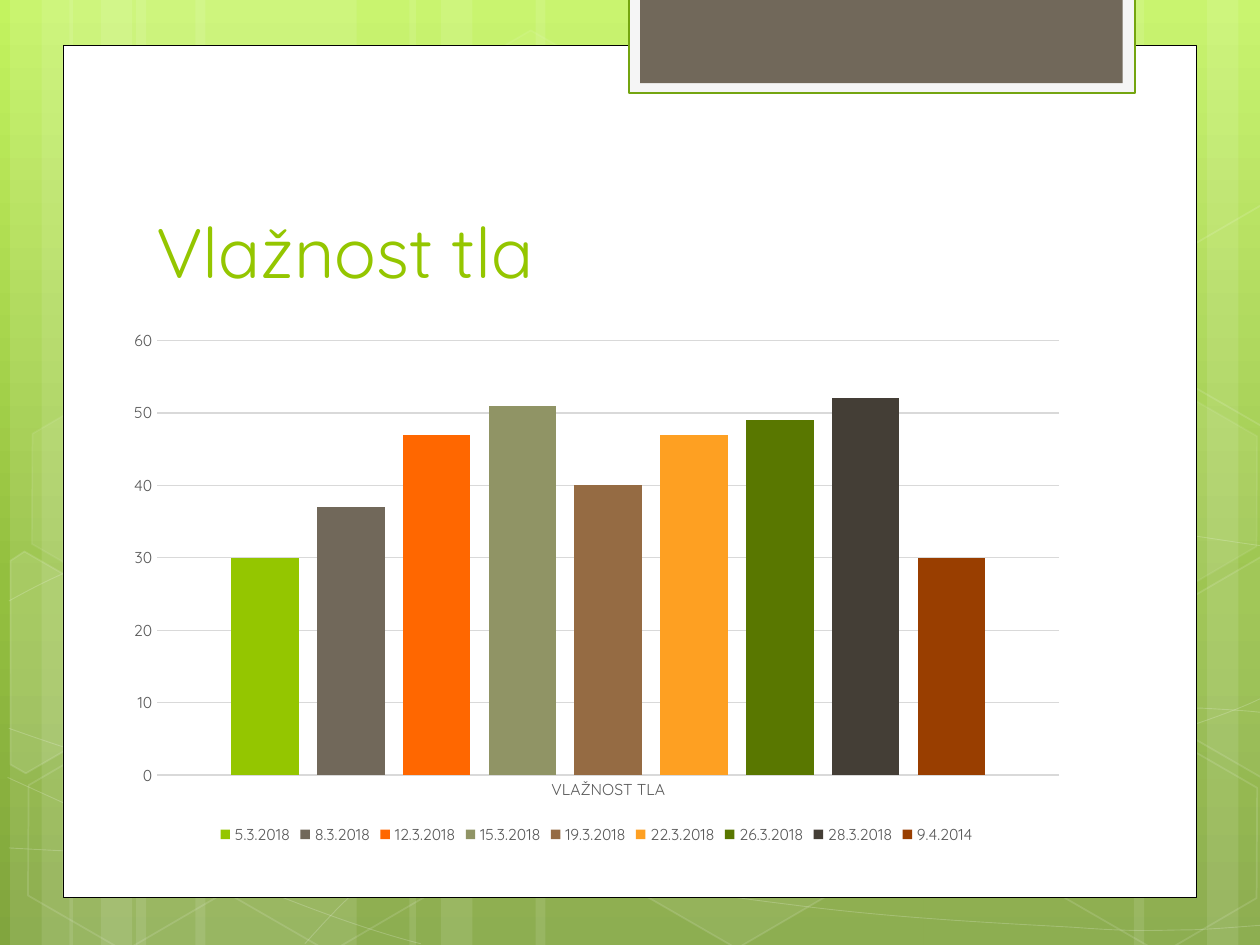
from copy import deepcopy
from dataclasses import dataclass

from lxml.etree import SubElement
from pptx import Presentation
from pptx.chart.data import CategoryChartData
from pptx.dml.color import RGBColor
from pptx.enum.chart import XL_CHART_TYPE, XL_LEGEND_POSITION, XL_TICK_MARK
from pptx.enum.shapes import MSO_SHAPE
from pptx.enum.text import MSO_ANCHOR
from pptx.oxml.ns import qn
from pptx.util import Emu, Pt

PX = 9144  # 100 px to the inch
FONT = "Quicksand"
WHITE = "FFFFFF"
TILT = 30
Point = tuple[int, int]


@dataclass
class Paint:
    """Fill and line; an empty colour means none, opacity is in percent."""
    fill: str = ""
    fill_opacity: int = 100
    line: str = ""
    line_opacity: int = 100
    width: float = 1


@dataclass
class Box:
    left: int
    top: int
    width: int
    height: int

    def emu(self) -> list[Emu]:
        return [px(n) for n in (self.left, self.top, self.width, self.height)]


@dataclass
class Hexagon:
    left: int
    top: int
    fill_opacity: int
    line_opacity: int


@dataclass
class Shard:
    """A hexagon cut off by the slide's edge, its points counted from left and top."""
    left: int
    top: int
    points: list[Point]
    fill_opacity: int


@dataclass
class Series:
    name: str
    value: int
    color: str


BAND = Paint(WHITE, 10)
BANDS = [(108, 175), (8, 50), (33, 83), (155, 175), (55, 50), (80, 83),
         (733, 175), (958, 50), (900, 83), (425, 308), (325, 50), (350, 83)]

# A start point, then two control points and an end point for each piece.
CURVE = Paint(line=WHITE, line_opacity=20, width=0.5)
CURVES = [
    [(7, 673), (61, 676), (115, 679), (190, 678), (265, 677), (358, 675), (458, 665),
     (558, 655), (700, 636), (792, 617), (883, 598), (977, 568), (1007, 551)],
    [(7, 477), (36, 461), (65, 446), (121, 431), (178, 416), (259, 394), (347, 387),
     (436, 380), (544, 379), (654, 387), (764, 395), (947, 426), (1007, 434)],
    [(6, 617), (127, 672), (247, 727), (334, 749)],
    [(7, 578), (38, 589), (70, 600), (128, 616), (186, 631), (273, 656), (357, 673),
     (440, 690), (545, 708), (628, 718), (711, 729), (800, 733), (853, 736),
     (905, 740), (919, 738), (945, 738), (971, 737), (989, 735), (1007, 734)],
    [(242, 749), (260, 729), (278, 709), (302, 691), (326, 673), (360, 653), (388, 639),
     (416, 625), (433, 619), (470, 609), (506, 599), (573, 585), (608, 578),
     (644, 571), (649, 571), (680, 569), (711, 566), (760, 563), (794, 562),
     (829, 561), (886, 562), (886, 562), (908, 562), (931, 562), (953, 562),
     (971, 563), (988, 564), (997, 565), (1006, 566), (1003, 565), (1006, 566)],
]

HEXAGONS = [
    Hexagon(334, 36, 4, 8), Hexagon(497, 589, 6, 12), Hexagon(11, 591, 0, 12),
    Hexagon(14, 312, 7, 8), Hexagon(174, 592, 0, 12), Hexagon(753, 453, 10, 12),
    Hexagon(834, 593, 0, 12), Hexagon(834, 314, 7, 8),
]

LEFT_SHARD = [(0, 12), (6, 0), (95, 0), (138, 77), (95, 152), (81, 152)]
RIGHT_SHARD = [(0, 75), (43, 0), (52, 0), (136, 145), (132, 152), (44, 152)]
SHARDS = [Shard(-33, 459, LEFT_SHARD, 10), Shard(917, 444, RIGHT_SHARD, 4),
          Shard(917, 165, RIGHT_SHARD, 0)]

MOISTURE = [
    Series("5.3.2018", 30, "94C600"), Series("8.3.2018", 37, "71685A"),
    Series("12.3.2018", 47, "FF6700"), Series("15.3.2018", 51, "909465"),
    Series("19.3.2018", 40, "956B43"), Series("22.3.2018", 47, "FEA022"),
    Series("26.3.2018", 49, "597700"), Series("28.3.2018", 52, "443E36"),
    Series("9.4.2014", 30, "993E00"),
]


def px(length: int) -> Emu:
    return Emu(length * PX)


def rgb(color: str) -> RGBColor:
    return RGBColor.from_string(color)


def set_solid(fill, color: str, opacity: int, owner) -> None:
    if not color or not opacity:
        fill.background()
        return
    fill.solid()
    fill.fore_color.rgb = rgb(color)
    if opacity < 100:
        solid = owner.find(qn("a:solidFill"))
        SubElement(solid[0], qn("a:alpha"), val=str(opacity * 1000))


def apply_paint(shape, paint: Paint) -> None:
    shape.shadow.inherit = False
    properties = shape.element.spPr
    set_solid(shape.fill, paint.fill, paint.fill_opacity, properties)
    shape.line.width = Pt(paint.width)
    set_solid(shape.line.fill, paint.line, paint.line_opacity, properties.find(qn("a:ln")))


def add_box(slide, box: Box, paint: Paint, kind=MSO_SHAPE.RECTANGLE):
    shape = slide.shapes.add_shape(kind, *box.emu())
    apply_paint(shape, paint)
    return shape


def add_outline(slide, points: list[Point], paint: Paint, close: bool):
    builder = slide.shapes.build_freeform(*points[0], scale=PX)
    builder.add_line_segments(points[1:], close=close)
    shape = builder.convert_to_shape()
    apply_paint(shape, paint)
    return shape


def add_curve(slide, points: list[Point]) -> None:
    """Draw the points as straight lines, then join each three lines into one Bézier piece."""
    shape = add_outline(slide, points, CURVE, close=False)
    outline = shape.element.find(".//" + qn("a:path"))
    lines = outline.findall(qn("a:lnTo"))
    for i in range(0, len(lines), 3):
        piece = SubElement(outline, qn("a:cubicBezTo"))
        for line in lines[i:i + 3]:
            piece.append(line[0])
            outline.remove(line)


def add_background(slide) -> None:
    fill = slide.background.fill
    fill.gradient()
    fill.gradient_angle = 270
    stop_list = slide.element.find(".//" + qn("a:gsLst"))
    stop_list.append(deepcopy(stop_list[-1]))
    colors = [(0, "C3F35F"), (0.62, "93BF3F"), (1, "81A53E")]
    for stop, (position, color) in zip(fill.gradient_stops, colors):
        stop.position = position
        stop.color.rgb = rgb(color)

    for left, width in BANDS:
        add_box(slide, Box(left, 0, width, 750), BAND)
    for curve in CURVES:
        add_curve(slide, curve)
    for item in HEXAGONS:
        shape = add_box(slide, Box(item.left, item.top, 175, 152),
                        Paint(WHITE, item.fill_opacity, WHITE, item.line_opacity), MSO_SHAPE.HEXAGON)
        shape.adjustments[0] = 0.285
        shape.rotation = TILT
    for shard in SHARDS:
        points = [(shard.left + x, shard.top + y) for x, y in shard.points]
        shape = add_outline(slide, points, Paint(WHITE, shard.fill_opacity, WHITE, 12), close=True)
        shape.rotation = TILT


def style_font(font, size: int, color: str) -> None:
    font.name, font.size = FONT, Pt(size)
    font.color.rgb = rgb(color)


def add_title(slide, text: str) -> None:
    frame = slide.shapes.add_textbox(*Box(114, 112, 768, 125).emu()).text_frame
    frame.word_wrap = True
    frame.vertical_anchor = MSO_ANCHOR.BOTTOM
    frame.text = text
    style_font(frame.paragraphs[0].runs[0].font, 40, "94C600")


def add_moisture_chart(slide) -> None:
    data = CategoryChartData()
    data.categories = ["VLAŽNOST TLA"]
    for item in MOISTURE:
        data.add_series(item.name, [item.value])
    chart = slide.shapes.add_chart(XL_CHART_TYPE.COLUMN_CLUSTERED, *Box(91, 254, 765, 420).emu(), data).chart
    style_font(chart.font, 10, "000000")
    chart.has_title = False
    chart.has_legend = True
    chart.legend.position = XL_LEGEND_POSITION.BOTTOM
    chart.legend.include_in_layout = False
    style_font(chart.legend.font, 9, "595959")

    plot = chart.plots[0]
    plot.gap_width, plot.overlap, plot.vary_by_categories = 219, -27, False
    for series, item in zip(plot.series, MOISTURE):
        series.format.fill.solid()
        series.format.fill.fore_color.rgb = rgb(item.color)

    values = chart.value_axis
    for axis in (chart.category_axis, values):
        axis.major_tick_mark = axis.minor_tick_mark = XL_TICK_MARK.NONE
        style_font(axis.tick_labels.font, 9, "595959")
    for line in (chart.category_axis.format.line, values.major_gridlines.format.line):
        line.width = Pt(0.75)
        line.color.rgb = rgb("D9D9D9")
    values.format.line.fill.background()


def main() -> None:
    deck = Presentation()
    deck.slide_width, deck.slide_height = px(1000), px(750)
    slide = deck.slides.add_slide(deck.slide_layouts[6])
    add_background(slide)
    add_box(slide, Box(50, 36, 900, 676), Paint(WHITE, line="000000", width=0.5))
    add_box(slide, Box(499, -2, 402, 76), Paint("F5F5F5", line="74A510", width=1.25))
    add_box(slide, Box(508, -2, 383, 68), Paint("71685A"))
    add_title(slide, "Vlažnost tla")
    add_moisture_chart(slide)
    deck.save("out.pptx")


if __name__ == "__main__":
    main()
